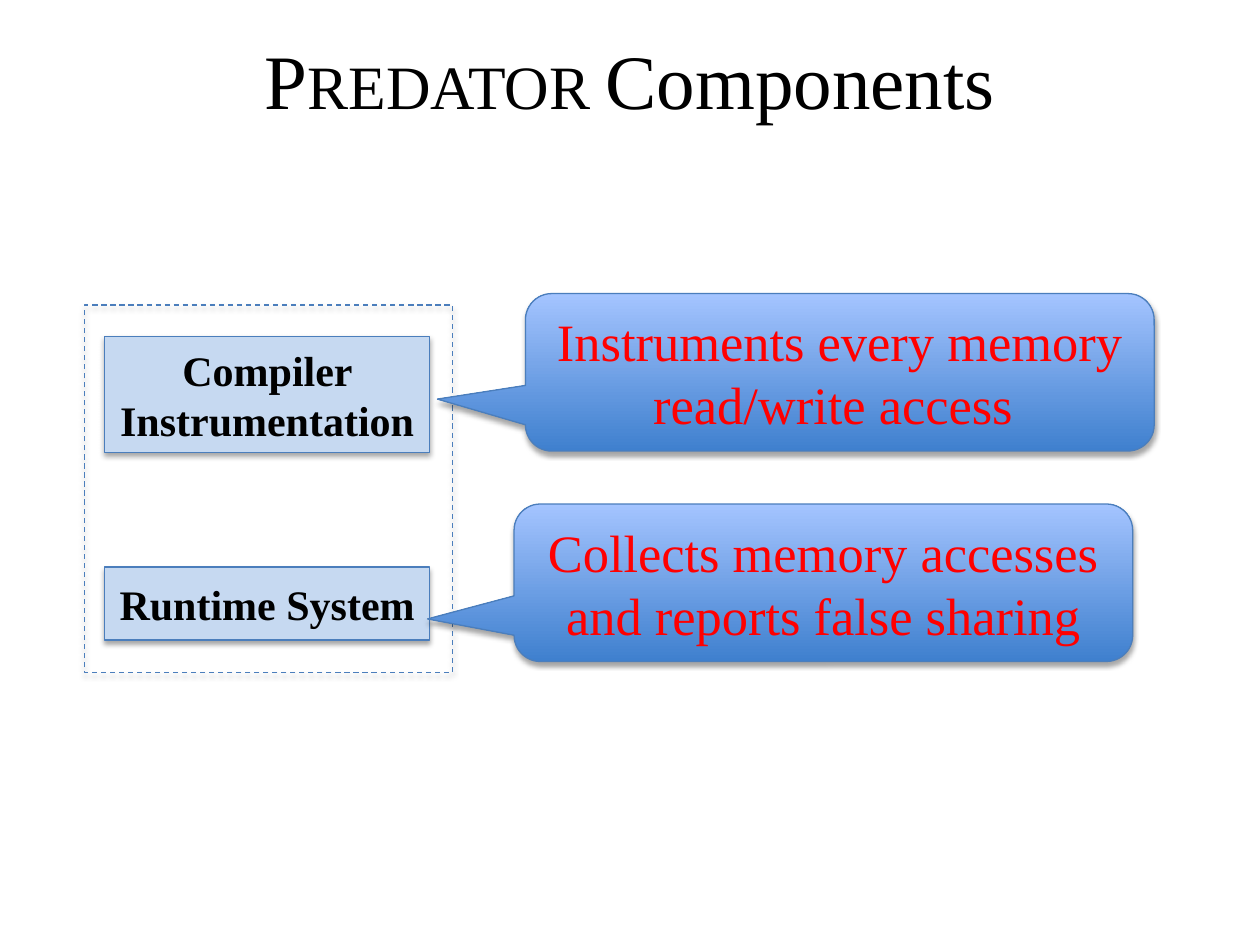
"""Build the slide on the components of Predator."""
from dataclasses import dataclass

import lxml.etree
import pptx
import pptx.dml.color
import pptx.enum.dml
import pptx.enum.shapes
import pptx.enum.text
import pptx.oxml.ns
import pptx.util
from pptx.util import Inches

FONT = "Times New Roman"
BLACK, RED = "000000", "FF0000"
OUTLINE, COMPONENT_FILL = "4B7EBC", "C6D9F1"
CALLOUT_BOTTOM, CALLOUT_TOP = "3F80CE", "A4C4FF"
SHAPES = pptx.enum.shapes.MSO_SHAPE


@dataclass(frozen=True)
class Component:
    label: str
    top: float
    height: float


@dataclass(frozen=True)
class Callout:
    message: str
    left: float
    top: float
    width: float
    tip: tuple[float, float]


COMPONENTS = (
    Component("Compiler Instrumentation", 2.67, 0.92),
    Component("Runtime System", 4.5, 0.58),
)
CALLOUTS = (
    Callout("Instruments every memory read/write access ", 4.17, 2.33, 4.99, (-0.64, 0.17)),
    Callout("Collects memory accesses and reports false sharing", 4.08, 4, 4.91, (-0.64, 0.23)),
)


def rgb(value: str) -> pptx.dml.color.RGBColor:
    return pptx.dml.color.RGBColor.from_string(value)


def write(shape, text: str, *, size: float, color: str = BLACK,
          bold: bool = False, small_caps: bool = False) -> None:
    frame = shape.text_frame
    frame.word_wrap = True
    frame.vertical_anchor = pptx.enum.text.MSO_ANCHOR.MIDDLE
    paragraph = frame.paragraphs[0]
    paragraph.alignment = pptx.enum.text.PP_ALIGN.CENTER
    run = paragraph.add_run()
    run.text = text
    run.font.name = FONT
    run.font.size = pptx.util.Pt(size)
    run.font.bold = bold
    run.font.color.rgb = rgb(color)
    if small_caps:
        run.font._element.set("cap", "small")


def add_shadow(shape) -> None:
    shape.shadow.inherit = False
    qn = pptx.oxml.ns.qn
    effects = shape._element.spPr.find(qn("a:effectLst"))
    shadow = lxml.etree.SubElement(
        effects, qn("a:outerShdw"), blurRad=str(pptx.util.Pt(3.1)),
        dist=str(pptx.util.Pt(1.8)), dir="5400000", rotWithShape="0")
    color = lxml.etree.SubElement(shadow, qn("a:srgbClr"), val=BLACK)
    lxml.etree.SubElement(color, qn("a:alpha"), val="35000")


def add_outlined(slide, kind, left: float, top: float, width: float, height: float):
    shape = slide.shapes.add_shape(
        kind, Inches(left), Inches(top), Inches(width), Inches(height))
    shape.line.color.rgb = rgb(OUTLINE)
    shape.line.width = pptx.util.Pt(0.75)
    add_shadow(shape)
    return shape


def add_component(slide, component: Component) -> None:
    box = add_outlined(slide, SHAPES.RECTANGLE, 0.83, component.top, 2.58, component.height)
    box.fill.solid()
    box.fill.fore_color.rgb = rgb(COMPONENT_FILL)
    write(box, component.label, size=24, bold=True)


def add_system_frame(slide) -> None:
    frame = add_outlined(slide, SHAPES.RECTANGLE, 0.67, 2.42, 2.92, 2.92)
    frame.fill.background()
    frame.line.dash_style = pptx.enum.dml.MSO_LINE.DASH


def add_callout(slide, callout: Callout) -> None:
    bubble = add_outlined(slide, SHAPES.ROUNDED_RECTANGULAR_CALLOUT,
                          callout.left, callout.top, callout.width, 1.25)
    bubble.adjustments[0], bubble.adjustments[1] = callout.tip
    bubble.fill.gradient()
    bubble.fill.gradient_angle = 90
    for stop, color in zip(bubble.fill.gradient_stops, (CALLOUT_BOTTOM, CALLOUT_TOP)):
        stop.color.rgb = rgb(color)
    write(bubble, callout.message, size=30, color=RED)


def main() -> None:
    deck = pptx.Presentation()
    deck.slide_width, deck.slide_height = Inches(10), Inches(7.5)
    slide = deck.slides.add_slide(deck.slide_layouts[5])
    title = slide.shapes.title
    title.left, title.top = Inches(0), Inches(0)
    title.width, title.height = Inches(10), Inches(1.25)
    write(title, "Predator ", size=44, small_caps=True)
    write(title, "Components", size=44)
    for component in COMPONENTS:
        add_component(slide, component)
    add_system_frame(slide)
    for callout in CALLOUTS:
        add_callout(slide, callout)
    deck.save("out.pptx")


if __name__ == "__main__":
    main()
